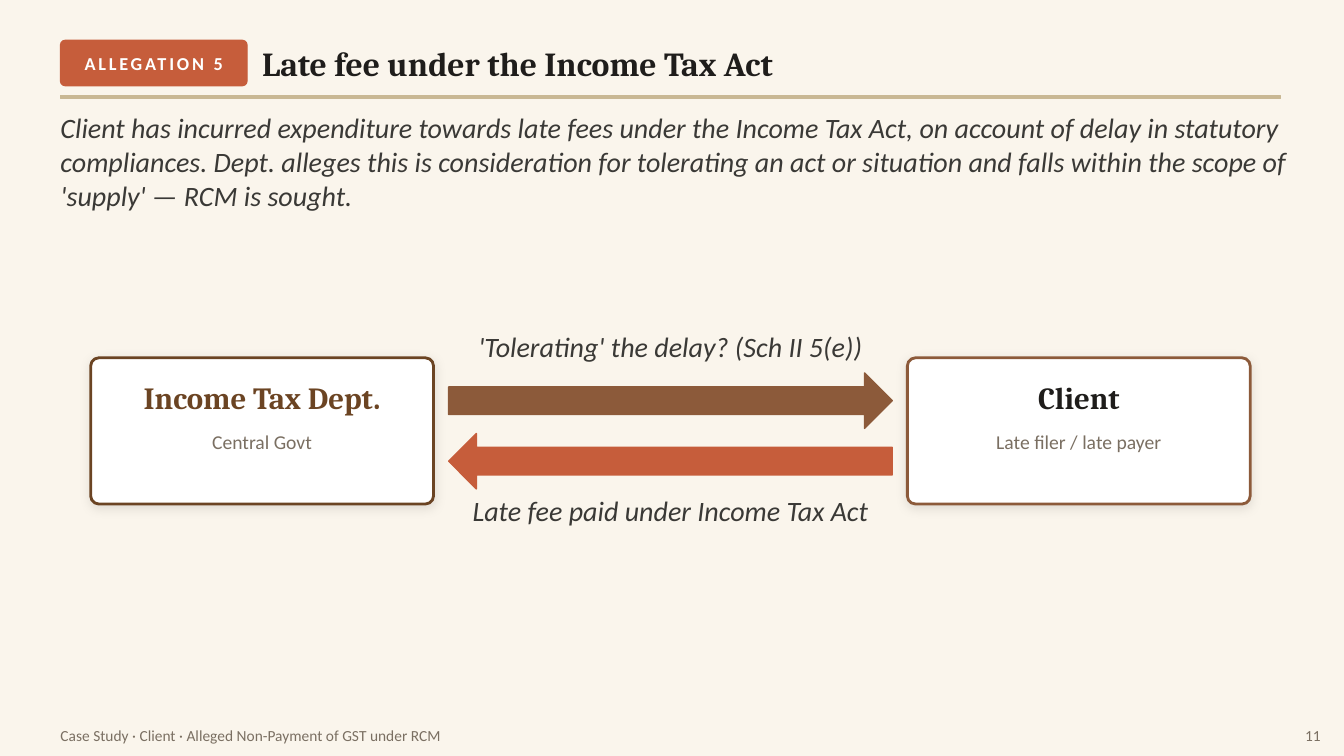
"""Build the slide on the late fee under the Income Tax Act."""
from dataclasses import dataclass

import lxml.etree
import pptx
import pptx.dml.color
import pptx.enum.shapes
import pptx.enum.text
import pptx.oxml.ns
import pptx.slide
import pptx.util

Inches = pptx.util.Inches
Kind = pptx.enum.shapes.MSO_SHAPE
Align = pptx.enum.text.PP_ALIGN
Anchor = pptx.enum.text.MSO_ANCHOR
qn = pptx.oxml.ns.qn

RUST, BROWN, DARK = "C65D3B", "8C5A3A", "6B4423"
INK, GREY, MUTED = "1F1D1B", "3A3936", "7A6F62"
WHITE, SAND, CREAM = "FFFFFF", "C9B894", "FAF5EC"
FIRM = "Client"


@dataclass(frozen=True)
class Box:
    left: float
    top: float
    width: float
    height: float


@dataclass(frozen=True)
class Style:
    size: int
    tint: str
    font: str = "Calibri"
    bold: bool = False
    slant: bool = False
    gap: int = 0


@dataclass(frozen=True)
class Label:
    box: Box
    text: str
    style: Style
    align: Align = Align.LEFT
    anchor: Anchor = Anchor.MIDDLE


@dataclass(frozen=True)
class Form:
    box: Box
    kind: Kind
    fill: str
    edge: str
    line: float = 1
    round: float | None = None
    shade: bool = False


@dataclass(frozen=True)
class Party:
    left: float
    name: str
    role: str
    edge: str
    tint: str


TAG = Style(13, WHITE, bold=True, gap=200)
TITLE = Style(24, INK, "Cambria", bold=True)
PROSE = Style(20, GREY, slant=True)
ROLE = Style(14, MUTED)
FOOT = Style(11, MUTED)
BADGE = Box(0.6, 0.4, 1.85, 0.45)

FORMS = [
    Form(BADGE, Kind.ROUNDED_RECTANGLE, RUST, RUST, round=0.11),
    Form(Box(0.6, 0.95, 12.1, 0.03), Kind.RECTANGLE, SAND, SAND),
    Form(Box(4.45, 3.7, 4.4, 0.55), Kind.RIGHT_ARROW, BROWN, BROWN),
    Form(Box(4.45, 4.3, 4.4, 0.55), Kind.LEFT_ARROW, RUST, RUST),
]
PARTIES = [
    Party(0.9, "Income Tax Dept.", "Central Govt", DARK, DARK),
    Party(9, FIRM, "Late filer / late payer", BROWN, INK),
]
LABELS = [
    Label(BADGE, "ALLEGATION 5", TAG, Align.CENTER),
    Label(Box(2.6, 0.35, 10.5, 0.55), "Late fee under the Income Tax Act", TITLE),
    Label(Box(0.6, 1.1, 12.7, 1.55),
          f"{FIRM} has incurred expenditure towards late fees under the Income Tax Act, "
          "on account of delay in statutory compliances. Dept. alleges this is "
          "consideration for tolerating an act or situation and falls within the scope "
          "of 'supply' — RCM is sought.", PROSE, anchor=Anchor.TOP),
    Label(Box(4.15, 3.1, 5, 0.5), "'Tolerating' the delay? (Sch II 5(e))", PROSE,
          Align.CENTER, Anchor.BOTTOM),
    Label(Box(4.15, 4.9, 5, 0.45), "Late fee paid under Income Tax Act", PROSE,
          Align.CENTER, Anchor.TOP),
    Label(Box(0.6, 7.15, 11, 0.3),
          f"Case Study · {FIRM} · Alleged Non-Payment of GST under RCM", FOOT),
    Label(Box(12.6, 7.15, 0.5, 0.3), "11", FOOT, Align.RIGHT),
]


def color(code: str) -> pptx.dml.color.RGBColor:
    """Turn a hex string into a colour."""
    return pptx.dml.color.RGBColor.from_string(code)


def place(box: Box) -> tuple[int, int, int, int]:
    """Give a box as slide lengths."""
    return Inches(box.left), Inches(box.top), Inches(box.width), Inches(box.height)


def draw_form(slide: pptx.slide.Slide, form: Form) -> None:
    """Draw one filled shape."""
    shape = slide.shapes.add_shape(form.kind, *place(form.box))
    if form.round is not None:
        shape.adjustments[0] = form.round
    shape.fill.solid()
    shape.fill.fore_color.rgb = color(form.fill)
    shape.line.color.rgb = color(form.edge)
    shape.line.width = pptx.util.Pt(form.line)
    shape.shadow.inherit = False
    if form.shade:
        root = shape._element.spPr.find(qn("a:effectLst"))
        cast = lxml.etree.SubElement(
            root, qn("a:outerShdw"), blurRad=str(pptx.util.Pt(8)),
            dist=str(pptx.util.Pt(2)), dir="5400000", algn="bl", rotWithShape="0")
        tint = lxml.etree.SubElement(cast, qn("a:srgbClr"), val="000000")
        lxml.etree.SubElement(tint, qn("a:alpha"), val="10000")


def draw_label(slide: pptx.slide.Slide, label: Label) -> None:
    """Draw one text box with a single run."""
    frame = slide.shapes.add_textbox(*place(label.box)).text_frame
    frame.word_wrap = True
    frame.vertical_anchor = label.anchor
    frame.margin_left = frame.margin_right = 0
    frame.margin_top = frame.margin_bottom = 0
    para = frame.paragraphs[0]
    para.alignment = label.align
    run = para.add_run()
    run.text = label.text
    style = label.style
    run.font.name = style.font
    run.font.size = pptx.util.Pt(style.size)
    run.font.bold = style.bold
    run.font.italic = style.slant
    run.font.color.rgb = color(style.tint)
    if style.gap:
        run.font._element.set("spc", str(style.gap))


def draw_party(slide: pptx.slide.Slide, party: Party) -> None:
    """Draw a card with a name and a role."""
    draw_form(slide, Form(Box(party.left, 3.55, 3.4, 1.45), Kind.ROUNDED_RECTANGLE,
                          WHITE, party.edge, 2, 0.055, True))
    left = party.left + 0.1
    name = Style(22, party.tint, "Cambria", bold=True)
    draw_label(slide, Label(Box(left, 3.67, 3.2, 0.55), party.name, name, Align.CENTER))
    draw_label(slide, Label(Box(left, 4.27, 3.2, 0.67), party.role, ROLE,
                            Align.CENTER, Anchor.TOP))


def main() -> None:
    """Build and save the deck."""
    deck = pptx.Presentation()
    deck.slide_width, deck.slide_height = Inches(13.33), Inches(7.5)
    slide = deck.slides.add_slide(deck.slide_layouts[6])
    slide.background.fill.solid()
    slide.background.fill.fore_color.rgb = color(CREAM)
    for form in FORMS:
        draw_form(slide, form)
    for party in PARTIES:
        draw_party(slide, party)
    for label in LABELS:
        draw_label(slide, label)
    deck.save("out.pptx")


if __name__ == "__main__":
    main()
